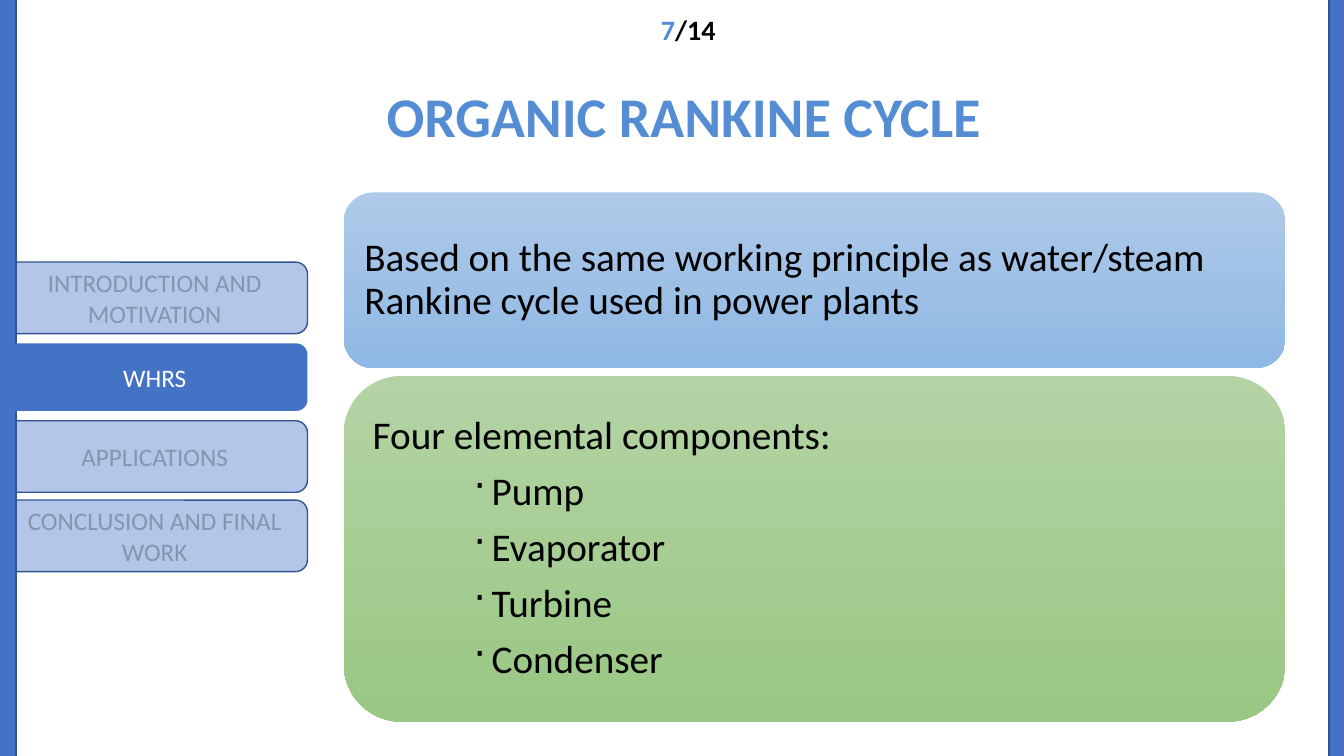
from dataclasses import dataclass

from lxml import etree
from pptx import Presentation
from pptx.dml.color import RGBColor
from pptx.enum import shapes, text
from pptx.oxml import ns
from pptx.util import Inches, Pt


@dataclass(frozen=True)
class Theme:
    font: str = "Calibri"
    accent: str = "548DD4"
    bar: str = "4472C4"
    edge: str = "31538F"
    pale: str = "B3C6E7"
    muted: str = "8296B0"
    white: str = "FFFFFF"
    black: str = "000000"
    blues: tuple = ("AFCAE9", "8FB8E4")
    greens: tuple = ("B3D3A4", "9AC784")
    head: int = 40
    body: int = 28
    page: int = 20
    tab: int = 18


THEME = Theme()
RECT = shapes.MSO_SHAPE.RECTANGLE
ROUND = shapes.MSO_SHAPE.ROUNDED_RECTANGLE
LEFT = text.PP_ALIGN.LEFT
MID = text.PP_ALIGN.CENTER


def rgb(code):
    return RGBColor.from_string(code)


def style(para, size, color, bold=False, align=MID):
    para.alignment = align
    for run in para.runs:
        font = run.font
        font.name = THEME.font
        font.size = Pt(size)
        font.bold = bold
        font.color.rgb = rgb(color)


def place(item, box):
    item.left, item.top, item.width, item.height = map(Inches, box)


def add_block(slide, kind, box, fill=None, line=None):
    block = slide.shapes.add_shape(kind, *map(Inches, box))
    block.shadow.inherit = False
    if fill:
        block.fill.solid()
        block.fill.fore_color.rgb = rgb(fill)
    if line:
        block.line.color.rgb = rgb(line)
        block.line.width = Pt(1)
    else:
        block.line.fill.background()
    return block


def add_title(slide, label):
    title = slide.shapes.title
    place(title, (0.19, 0.76, 13.18, 0.87))
    frame = title.text_frame
    frame.text = label
    frame.auto_size = text.MSO_AUTO_SIZE.NONE
    frame.vertical_anchor = text.MSO_ANCHOR.TOP
    para = frame.paragraphs[0]
    para.line_spacing = 1.0
    para.space_before = Pt(0)
    style(para, THEME.head, THEME.accent, True)


def add_page(slide, page, total):
    box = slide.shapes.add_textbox(*map(Inches, (4.57, 0.08, 4.51, 0.44)))
    box.text_frame.word_wrap = True
    para = box.text_frame.paragraphs[0]
    for part in (str(page), f"/{total}"):
        para.add_run().text = part
    style(para, THEME.page, THEME.black, True)
    para.runs[0].font.color.rgb = rgb(THEME.accent)


def add_tab(slide, row, label, live=False):
    trim = 0.02 if live else 0
    box = (0.02, 2.6 + 0.787 * row + trim, 3.03, 0.71 - 2 * trim)
    fill = THEME.bar if live else THEME.pale
    tab = add_block(slide, ROUND, box, fill, None if live else THEME.edge)
    frame = tab.text_frame
    frame.word_wrap = True
    frame.vertical_anchor = text.MSO_ANCHOR.MIDDLE
    frame.text = label
    style(frame.paragraphs[0], THEME.tab, THEME.white if live else THEME.muted)


def add_bullet(para):
    props = para._p.get_or_add_pPr()
    props.set("marL", str(Inches(1.18)))
    props.set("indent", str(Inches(-0.18)))
    etree.SubElement(props, ns.qn("a:buChar")).set("char", "·")


def add_card(slide, top, height, shades, lead, items=()):
    card = add_block(slide, ROUND, (3.41, top, 9.34, height))
    card.fill.gradient()
    card.fill.gradient_angle = 270
    for stop, shade, spot in zip(card.fill.gradient_stops, shades, (0, 1)):
        stop.color.rgb = rgb(shade)
        stop.position = spot
    frame = card.text_frame
    frame.word_wrap = True
    frame.vertical_anchor = text.MSO_ANCHOR.MIDDLE
    frame.margin_left = frame.margin_right = Inches(0.12)
    frame.margin_top = frame.margin_bottom = Inches(0.12)
    frame.text = "\n".join((lead, *items))
    for index, para in enumerate(frame.paragraphs):
        para.line_spacing = 0.9
        style(para, THEME.body, THEME.black, align=LEFT)
        if index:
            para.space_before = Pt(9.8)
            add_bullet(para)


def main():
    deck = Presentation()
    deck.slide_width = Inches(13.33)
    deck.slide_height = Inches(7.5)
    slide = deck.slides.add_slide(deck.slide_layouts[5])

    add_title(slide, "ORGANIC RANKINE CYCLE")
    add_page(slide, 7, 14)

    tabs = ("INTRODUCTION AND MOTIVATION", "WHRS", "APPLICATIONS",
            "CONCLUSION AND FINAL WORK")
    live = 1
    for row, label in enumerate(tabs):
        if row != live:
            add_tab(slide, row, label)
    for left in (-0.02, 13.18):
        add_block(slide, RECT, (left, -0.2, 0.18, 8.1), THEME.bar, THEME.edge)
    add_tab(slide, live, tabs[live], True)

    add_card(slide, 1.91, 1.74, THEME.blues,
             "Based on the same working principle as water/steam "
             "Rankine cycle used in power plants")
    add_card(slide, 3.73, 3.43, THEME.greens, "Four elemental components:",
             ("Pump", "Evaporator", "Turbine", "Condenser"))
    deck.save("out.pptx")


if __name__ == "__main__":
    main()
